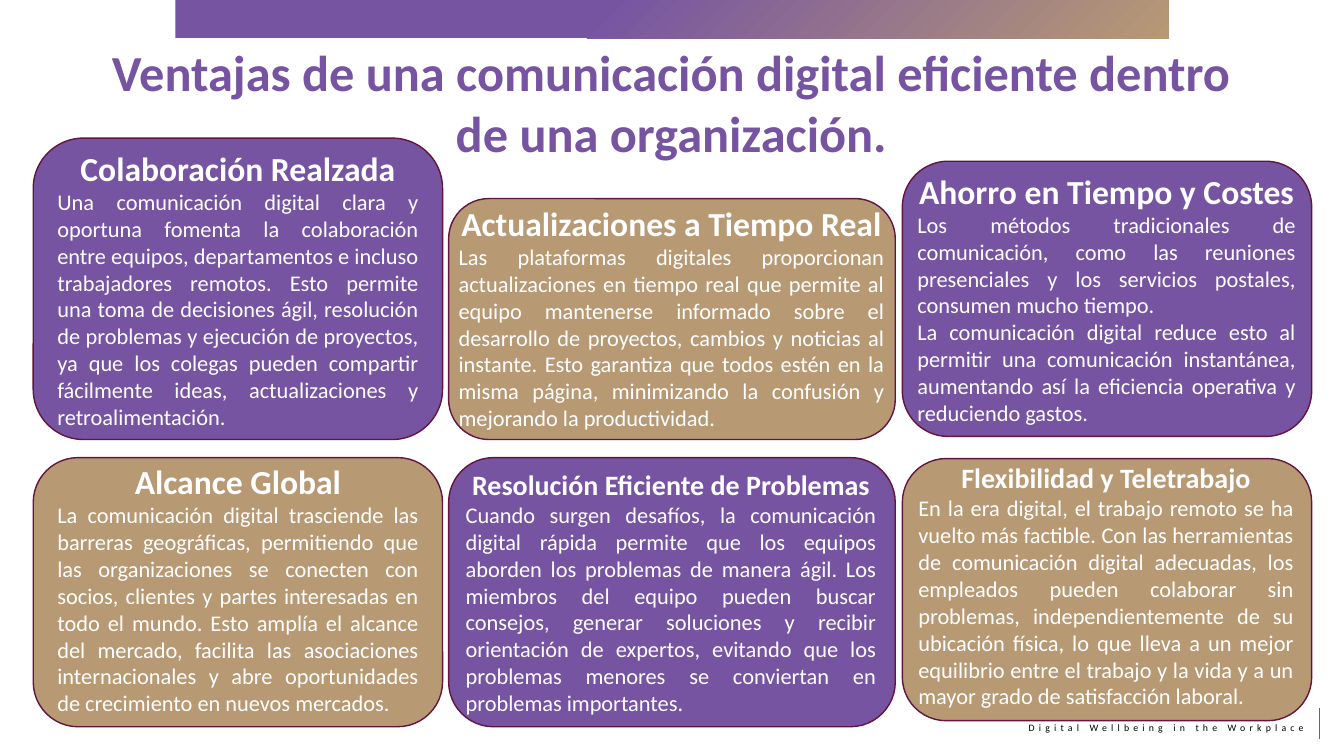
from lxml.etree import SubElement
from pptx import Presentation
from pptx.dml.color import RGBColor
from pptx.enum.shapes import MSO_CONNECTOR, MSO_SHAPE
from pptx.enum.text import MSO_ANCHOR, PP_ALIGN
from pptx.oxml import parse_xml
from pptx.oxml.ns import nsdecls, qn
from pptx.util import Inches, Pt

WIDTH, HEIGHT = 13.33, 7.5
FONT = "Calibri"
PURPLE, TAN, WINE, WHITE, BLACK = "7654A2", "B79974", "631440", "FFFFFF", "000000"
TITLE = "Ventajas de una comunicación digital eficiente dentro de una organización."
FOOTER = "Digital Wellbeing in the Workplace"
COLUMNS = [(0.33, 4.06), (4.45, 4.43), (8.95, 4.06)]

CARDS = [
    {"heading": "Colaboración Realzada", "size": 24, "top": 1.37, "height": 2.99,
     "text": (0.47, 1.37, 3.78, 2.99),
     "body": ["Una comunicación digital clara y oportuna fomenta la colaboración entre equipos, departamentos e incluso trabajadores remotos. Esto permite una toma de decisiones ágil, resolución de problemas y ejecución de proyectos, ya que los colegas pueden compartir fácilmente ideas, actualizaciones y retroalimentación."]},
    {"heading": "Actualizaciones a Tiempo Real", "size": 24, "top": 1.97, "height": 2.39,
     "text": (4.45, 1.95, 4.42, 2.39),
     "body": ["Las plataformas digitales proporcionan actualizaciones en tiempo real que permite al equipo mantenerse informado sobre el desarrollo de proyectos, cambios y noticias al instante. Esto garantiza que todos estén en la misma página, minimizando la confusión y mejorando la productividad."]},
    {"heading": "Ahorro en Tiempo y Costes", "size": 24, "top": 1.6, "height": 2.73,
     "text": (9, 1.63, 3.95, 2.66),
     "body": ["Los métodos tradicionales de comunicación, como las reuniones presenciales y los servicios postales, consumen mucho tiempo.",
              "La comunicación digital reduce esto al permitir una comunicación instantánea, aumentando así la eficiencia operativa y reduciendo gastos."]},
    {"heading": "Alcance Global", "size": 24, "top": 4.54, "height": 2.67,
     "text": (0.47, 4.35, 3.78, 2.98),
     "body": ["La comunicación digital trasciende las barreras geográficas, permitiendo que las organizaciones se conecten con socios, clientes y partes interesadas en todo el mundo. Esto amplía el alcance del mercado, facilita las asociaciones internacionales y abre oportunidades de crecimiento en nuevos mercados."]},
    {"heading": "Resolución Eficiente de Problemas", "size": 20, "top": 4.54, "height": 2.67,
     "text": (4.52, 4.42, 4.27, 2.9),
     "body": ["Cuando surgen desafíos, la comunicación digital rápida permite que los equipos aborden los problemas de manera ágil. Los miembros del equipo pueden buscar consejos, generar soluciones y recibir orientación de expertos, evitando que los problemas menores se conviertan en problemas importantes."]},
    {"heading": "Flexibilidad y Teletrabajo", "size": 20, "top": 4.55, "height": 2.6,
     "text": (9.01, 4.51, 3.92, 2.59),
     "body": ["En la era digital, el trabajo remoto se ha vuelto más factible. Con las herramientas de comunicación digital adecuadas, los empleados pueden colaborar sin problemas, independientemente de su ubicación física, lo que lleva a un mejor equilibrio entre el trabajo y la vida y a un mayor grado de satisfacción laboral."]},
]


def color(value):
    return RGBColor.from_string(value)


def add_text(shapes, place, lines, anchor=MSO_ANCHOR.TOP):
    box = shapes.add_textbox(*map(Inches, place))
    frame = box.text_frame
    frame.word_wrap = True
    frame.vertical_anchor = anchor
    for index, (words, size, bold, align, shade) in enumerate(lines):
        para = frame.paragraphs[0] if index == 0 else frame.add_paragraph()
        para.alignment = align
        span = para.add_run()
        span.text = words
        span.font.name = FONT
        span.font.size = Pt(size)
        span.font.bold = bold
        span.font.color.rgb = color(shade)
    return box


def add_band(shapes):
    band = shapes.add_shape(MSO_SHAPE.RECTANGLE, *map(Inches, (1.74, 0, 9.85, 0.38)))
    band.shadow.inherit = False
    band.line.fill.background()
    gradient = parse_xml(
        f'<a:gradFill {nsdecls("a")} rotWithShape="1"><a:gsLst>'
        f'<a:gs pos="0"><a:srgbClr val="{TAN}"/></a:gs>'
        f'<a:gs pos="58000"><a:srgbClr val="{PURPLE}"/></a:gs></a:gsLst>'
        '<a:path path="circle"><a:fillToRect l="100000" t="100000"/></a:path></a:gradFill>')
    band.element.spPr.find(qn("a:prstGeom")).addnext(gradient)


def add_card(page, index, card):
    left, width = COLUMNS[index % 3]
    group = page.shapes.add_group_shape()
    panel = group.shapes.add_shape(
        MSO_SHAPE.ROUNDED_RECTANGLE,
        *map(Inches, (left, card["top"], width, card["height"])))
    panel.shadow.inherit = False
    panel.fill.solid()
    panel.fill.fore_color.rgb = color((PURPLE, TAN)[index % 2])
    panel.line.color.rgb = color(WINE)
    panel.line.width = Pt(1)
    lines = [(card["heading"], card["size"], True, PP_ALIGN.CENTER, WHITE)]
    lines += [(words, 16, False, PP_ALIGN.JUSTIFY, WHITE) for words in card["body"]]
    add_text(group.shapes, card["text"], lines, MSO_ANCHOR.MIDDLE)


def main():
    deck = Presentation()
    deck.slide_width, deck.slide_height = Inches(WIDTH), Inches(HEIGHT)
    page = deck.slides.add_slide(deck.slide_layouts[6])

    footer = add_text(page.shapes, (9.68, 7.11, 3.35, 0.22),
                      [(FOOTER, 7, False, PP_ALIGN.RIGHT, BLACK)])
    footer.text_frame.paragraphs[0].runs[0].font._element.set("spc", "300")

    rule = page.shapes.add_connector(
        MSO_CONNECTOR.STRAIGHT, *map(Inches, (13.09, 7.33, 13.09, 7.02)))
    rule.line.color.rgb = color(PURPLE)
    rule.line.width = Pt(0.75)
    SubElement(rule._element.spPr, qn("a:effectLst"))

    add_band(page.shapes)
    add_text(page.shapes, (0.93, 0.36, 11.46, 0.88),
             [(TITLE, 36, True, PP_ALIGN.CENTER, PURPLE)])
    for index, card in enumerate(CARDS):
        add_card(page, index, card)
    deck.save("out.pptx")


if __name__ == "__main__":
    main()
